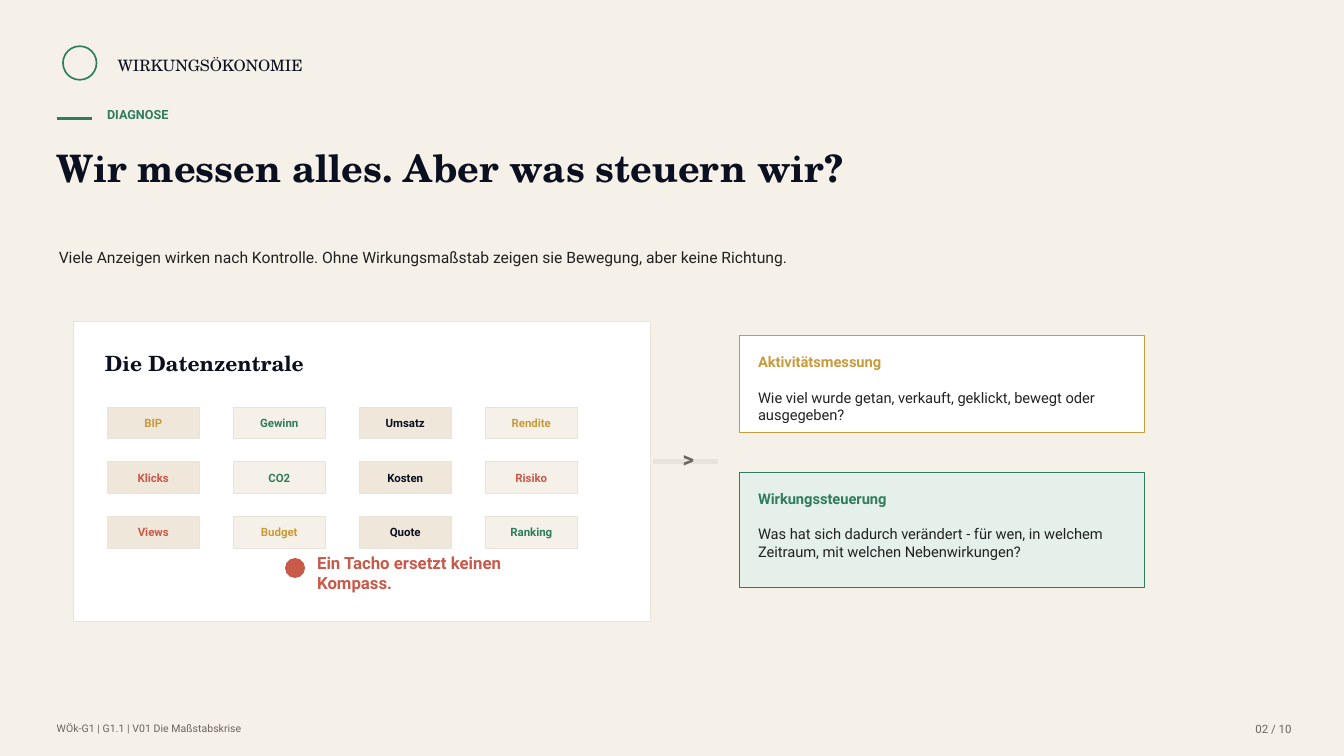
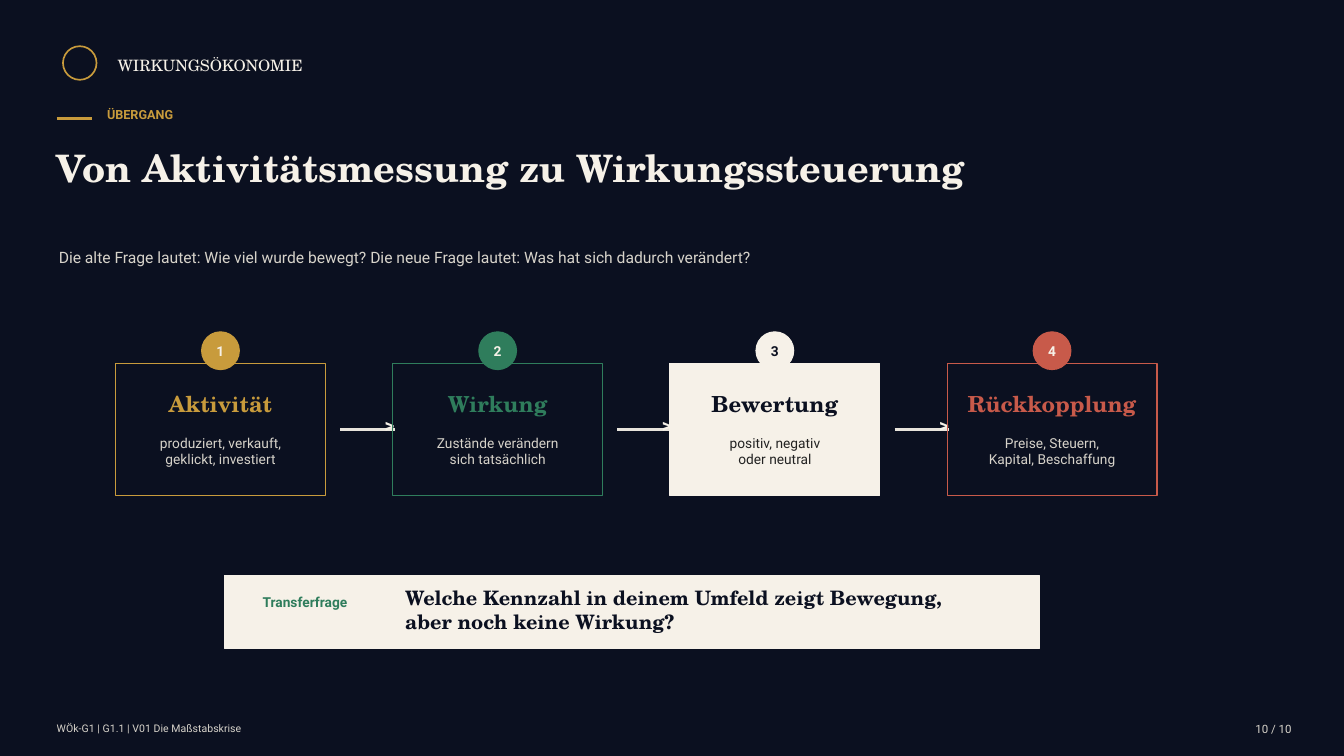
import pptx
import pptx.util
import pptx.dml.color
import pptx.enum.shapes
import pptx.enum.text
import pptx.oxml.ns
import lxml.etree

RGB = pptx.dml.color.RGBColor
SHAPE = pptx.enum.shapes.MSO_SHAPE
ANCHOR = pptx.enum.text.MSO_ANCHOR
LEFT, CENTER, RIGHT = (pptx.enum.text.PP_ALIGN.LEFT, pptx.enum.text.PP_ALIGN.CENTER,
                       pptx.enum.text.PP_ALIGN.RIGHT)

NIGHT = RGB(0x0B, 0x10, 0x20)
CREAM = RGB(0xF6, 0xF1, 0xE8)
SAND = RGB(0xEF, 0xE7, 0xD9)
RULE = RGB(0xE8, 0xE4, 0xDC)
WHITE = RGB(0xFF, 0xFF, 0xFF)
MINT = RGB(0xE5, 0xF0, 0xEA)
GREEN = RGB(0x2F, 0x7D, 0x5C)
GOLD = RGB(0xC8, 0x9B, 0x3C)
RED = RGB(0xC8, 0x5A, 0x4A)
INK = RGB(0x22, 0x22, 0x22)
MUTED = RGB(0x6C, 0x65, 0x5B)
PALE = RGB(0xD7, 0xD3, 0xCA)

SANS, SERIF = "Roboto", "TeX Gyre Schola"
COLS, ROWS = 128, 72


class Deck:
    """Slide style on a grid of 128 columns and 72 rows."""

    def __init__(self):
        self.prs = pptx.Presentation()
        self.prs.slide_width = pptx.util.Inches(13.33)
        self.prs.slide_height = pptx.util.Inches(7.5)
        self.s = None

    def x(self, cols):
        return round(self.prs.slide_width * cols / COLS)

    def y(self, rows):
        return round(self.prs.slide_height * rows / ROWS)

    def area(self, x, y, w, h):
        return self.x(x), self.y(y), self.x(w), self.y(h)

    def add_lines(self, tf, text, size, color, bold=False, font=SANS, align=LEFT):
        tf.word_wrap = True
        tf.margin_left = tf.margin_right = tf.margin_top = tf.margin_bottom = 0
        for i, line in enumerate(text.split("\n")):
            p = tf.paragraphs[0] if i == 0 else tf.add_paragraph()
            p.alignment = align
            r = p.add_run()
            r.text = line
            r.font.name = font
            r.font.size = pptx.util.Pt(size)
            r.font.bold = bold
            r.font.color.rgb = color

    def text(self, x, y, w, h, text, size, color, **style):
        tb = self.s.shapes.add_textbox(*self.area(x, y, w, h))
        self.add_lines(tb.text_frame, text, size, color, **style)

    def shape(self, x, y, w, h, fill=None, line=None, kind=SHAPE.RECTANGLE, width=0.75):
        sp = self.s.shapes.add_shape(kind, *self.area(x, y, w, h))
        sp.shadow.inherit = False
        if fill is None:
            sp.fill.background()
        else:
            sp.fill.solid()
            sp.fill.fore_color.rgb = fill
        sp.line.color.rgb = line or fill
        sp.line.width = pptx.util.Pt(width)
        return sp

    def label(self, sp, text, size, color):
        """Bold text in the middle of a shape."""
        sp.text_frame.vertical_anchor = ANCHOR.MIDDLE
        self.add_lines(sp.text_frame, text, size, color, bold=True, align=CENTER)

    def bar(self, x, y, w, color, width=2.2):
        cx = self.s.shapes.add_connector(pptx.enum.shapes.MSO_CONNECTOR.STRAIGHT, self.x(x),
                                         self.y(y), self.x(x + w), self.y(y))
        cx.line.color.rgb = color
        cx.line.width = pptx.util.Pt(width)
        lxml.etree.SubElement(cx._element.spPr, pptx.oxml.ns.qn("a:effectLst"))

    def slide(self, number, kicker, title, lead, dark=False):
        """Start a slide with brand line, kicker, title, lead and footer."""
        self.s = self.prs.slides.add_slide(self.prs.slide_layouts[6])
        ground, main, accent, body, foot = (
            (NIGHT, CREAM, GOLD, PALE, PALE) if dark else (CREAM, NIGHT, GREEN, INK, MUTED))
        self.s.background.fill.solid()
        self.s.background.fill.fore_color.rgb = ground
        self.shape(6, 4.4, 3.2, 3.2, line=accent, kind=SHAPE.OVAL, width=1.2)
        self.text(11.2, 5.3, 25, 2.2, "WIRKUNGSÖKONOMIE", 11.2, main, font=SERIF)
        self.bar(5.4, 11.3, 3.4, accent)
        self.text(10.2, 10.2, 42, 2.4, kicker, 9, accent, bold=True)
        self.text(5.4, 13.8, 90, 8.6, title, 27, main, bold=True, font=SERIF)
        self.text(5.6, 23.6, 80, 4.2, lead, 11.2, body)
        self.text(5.4, 68.8, 52, 1.8, "WÖk-G1 | G1.1 | V01 Die Maßstabskrise", 7.5, foot)
        self.text(116.4, 68.8, 6.6, 1.8, f"{number:02} / 10", 8.2, foot, align=RIGHT)

    def chips(self, x, y, rows):
        for i, row in enumerate(rows):
            for j, (text, color) in enumerate(row):
                sp = self.shape(x + 12 * j, y + 5.2 * i, 8.8, 3, CREAM if j % 2 else SAND, RULE)
                self.label(sp, text, 8.2, color)

    def card(self, y, h, head, body, color, fill):
        x = 70.4
        self.shape(x, y, 38.6, h, fill, color)
        self.text(x + 1.8, y + 1.6, 35, 2.4, head, 10.5, color, bold=True)
        self.text(x + 1.8, y + 5, 35, h - 6.4, body, 10.5, INK)

    def step(self, x, number, head, body, color, filled=False):
        y = 34.6
        strong, soft = (NIGHT, INK) if filled else (color, PALE)
        self.shape(x, y, 20, 12.6, color if filled else None, color)
        disc = self.shape(x + 8.2, y - 3, 3.6, 3.6, color, kind=SHAPE.OVAL)
        self.label(disc, str(number), 9.8, NIGHT if filled else CREAM)
        self.text(x + 1, y + 2.6, 18, 2.4, head, 15.8, strong, bold=True, font=SERIF,
                  align=CENTER)
        self.text(x + 2.4, y + 6.8, 15.2, 3.8, body, 9.8, soft, align=CENTER)


def measuring(d):
    d.slide(2, "DIAGNOSE", "Wir messen alles. Aber was steuern wir?",
            "Viele Anzeigen wirken nach Kontrolle. Ohne Wirkungsmaßstab zeigen sie Bewegung, "
            "aber keine Richtung.")
    d.shape(7, 30.6, 55, 28.6, WHITE, RULE)
    d.text(10, 33.4, 22, 2.4, "Die Datenzentrale", 15, NIGHT, bold=True, font=SERIF)
    d.chips(10.2, 38.8, [
        [("BIP", GOLD), ("Gewinn", GREEN), ("Umsatz", NIGHT), ("Rendite", GOLD)],
        [("Klicks", RED), ("CO2", GREEN), ("Kosten", NIGHT), ("Risiko", RED)],
        [("Views", RED), ("Budget", GOLD), ("Quote", NIGHT), ("Ranking", GREEN)],
    ])
    d.card(32, 9.2, "Aktivitätsmessung",
           "Wie viel wurde getan, verkauft, geklickt, bewegt oder ausgegeben?", GOLD, WHITE)
    d.card(45, 11, "Wirkungssteuerung",
           "Was hat sich dadurch verändert - für wen, in welchem Zeitraum, "
           "mit welchen Nebenwirkungen?", GREEN, MINT)
    d.bar(62.2, 44, 6.2, RULE, width=3.6)
    d.text(65, 42.4, 2.4, 2.8, ">", 15.8, MUTED, bold=True)
    d.shape(27.2, 53.2, 1.8, 1.8, RED, kind=SHAPE.OVAL)
    d.text(30.2, 52.6, 25, 3.2, "Ein Tacho ersetzt keinen Kompass.", 12, RED, bold=True)


def steering(d):
    d.slide(10, "ÜBERGANG", "Von Aktivitätsmessung zu Wirkungssteuerung",
            "Die alte Frage lautet: Wie viel wurde bewegt? Die neue Frage lautet: "
            "Was hat sich dadurch verändert?", dark=True)
    steps = [
        ("Aktivität", "produziert, verkauft,\ngeklickt, investiert", GOLD),
        ("Wirkung", "Zustände verändern\nsich tatsächlich", GREEN),
        ("Bewertung", "positiv, negativ\noder neutral", CREAM),
        ("Rückkopplung", "Preise, Steuern,\nKapital, Beschaffung", RED),
    ]
    for i, (head, body, color) in enumerate(steps):
        x = 11 + 26.4 * i
        d.step(x, i + 1, head, body, color, filled=color == CREAM)
        if i < len(steps) - 1:
            d.bar(x + 21.4, 40.9, 5.2, RULE)
            d.text(x + 25, 39.4, 2.2, 2.4, ">", 13.5, CREAM, bold=True, align=CENTER)
    d.shape(21.4, 54.8, 77.6, 7, CREAM)
    d.text(25, 56.6, 13, 1.8, "Transferfrage", 9.8, GREEN, bold=True)
    d.text(38.6, 55.8, 54.8, 4.2,
           "Welche Kennzahl in deinem Umfeld zeigt Bewegung, aber noch keine Wirkung?",
           14.2, NIGHT, bold=True, font=SERIF)


def main():
    d = Deck()
    measuring(d)
    steering(d)
    d.prs.save("out.pptx")


if __name__ == "__main__":
    main()
